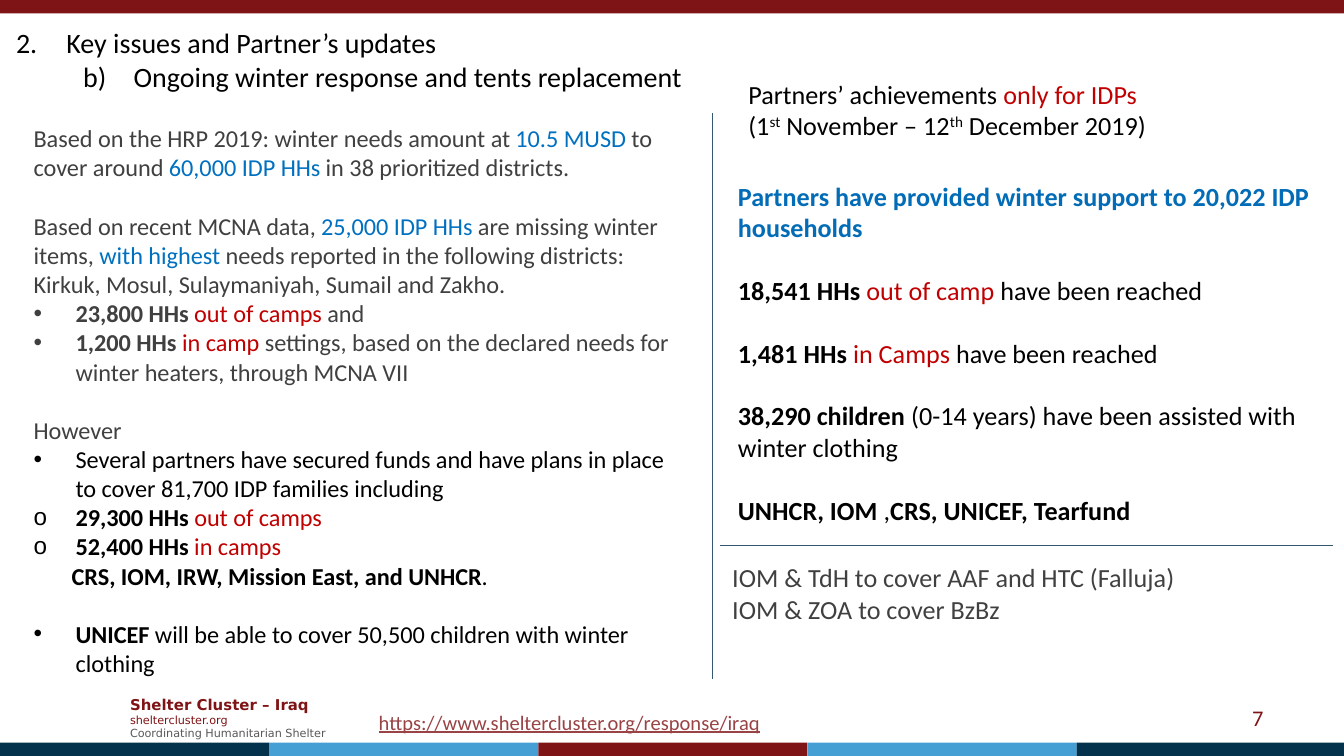
from lxml import etree
from pptx import Presentation
from pptx.dml.color import RGBColor
from pptx.enum import shapes, text
from pptx.oxml import ns
from pptx.util import Pt

MAROON = RGBColor(0x7F, 0x14, 0x16)
NAVY = RGBColor(0x04, 0x31, 0x4C)
SKY = RGBColor(0x45, 0x9F, 0xD5)
ROSE = RGBColor(0x99, 0x43, 0x45)
SLATE = RGBColor(0x33, 0x58, 0x6F)
BLUE = RGBColor(0x00, 0x70, 0xC0)
HEAD_BLUE = RGBColor(0x02, 0x6C, 0xB6)
RED = RGBColor(0xC0, 0x00, 0x00)
BLACK = RGBColor(0x00, 0x00, 0x00)
GREY = RGBColor(0x40, 0x40, 0x40)
MID_GREY = RGBColor(0x59, 0x59, 0x59)


def run(txt, color=None, bold=False, sup=False, size=None, underline=None):
    """Describe a run of text and its format."""
    return dict(txt=txt, color=color, bold=bold, sup=sup, size=size, underline=underline)


def para(*runs, bullet=None, number=None, left=0, hang=0, before=0, level=0):
    """Describe a paragraph made of runs."""
    return dict(runs=runs, bullet=bullet, number=number, left=left, hang=hang,
                before=before, level=level)


def item(*runs, bullet="•", before=0):
    """Describe a bulleted paragraph."""
    return para(*runs, bullet=bullet, left=22.5, hang=22.5, before=before)


def set_bullet(p, d):
    """Set the indent and the bullet or number of a paragraph."""
    pPr = p._p.get_or_add_pPr()
    pPr.set("marL", str(Pt(d["left"])))
    pPr.set("indent", str(-Pt(d["hang"])))
    if d["number"]:
        kind, start = d["number"]
        etree.SubElement(pPr, ns.qn("a:buAutoNum"), type=kind, startAt=str(start))
    elif d["bullet"]:
        etree.SubElement(pPr, ns.qn("a:buChar"), char=d["bullet"])
    else:
        etree.SubElement(pPr, ns.qn("a:buNone"))


def write(sp, box, paras, size=14, color=BLACK, font="Calibri", align=text.PP_ALIGN.LEFT,
          anchor=text.MSO_ANCHOR.TOP, wrap=True):
    """Place a text shape in its box and fill it with paragraphs."""
    sp.left, sp.top, sp.width, sp.height = (Pt(v) for v in box)
    tf = sp.text_frame
    tf.word_wrap = wrap
    tf.auto_size = text.MSO_AUTO_SIZE.NONE
    tf.vertical_anchor = anchor
    for i, d in enumerate(paras):
        p = tf.paragraphs[0] if i == 0 else tf.add_paragraph()
        set_bullet(p, d)
        p.level = d["level"]
        p.alignment = align
        p.space_before = Pt(d["before"])
        for f in d["runs"]:
            r = p.add_run()
            r.text = f["txt"]
            r.font.name = font
            r.font.size = Pt(f["size"] or size)
            r.font.bold = f["bold"]
            r.font.underline = f["underline"]
            r.font.color.rgb = f["color"] or color
            if f["sup"]:
                r._r.get_or_add_rPr().set("baseline", "30000")


def add_text(s, box, paras, **fmt):
    """Add a text box."""
    write(s.shapes.add_textbox(0, 0, 0, 0), box, paras, **fmt)


def add_bar(s, box, color):
    """Add a plain filled bar."""
    sp = s.shapes.add_shape(shapes.MSO_SHAPE.RECTANGLE, *(Pt(v) for v in box))
    sp.shadow.inherit = False
    sp.fill.solid()
    sp.fill.fore_color.rgb = color
    sp.line.fill.background()


def add_rule(s, x1, y1, x2, y2):
    """Add a thin dividing line."""
    ln = s.shapes.add_connector(shapes.MSO_CONNECTOR.STRAIGHT, Pt(x1), Pt(y1), Pt(x2), Pt(y2))
    ln.line.color.rgb = SLATE
    ln.line.width = Pt(0.75)
    etree.SubElement(ln._element.spPr, ns.qn("a:effectLst"))


def add_footer(s, x, y, w, h):
    """Add the footer texts and the coloured strip below them."""
    strip = 7.2
    step = w / 5
    for i, color in enumerate((NAVY, SKY, MAROON, SKY, NAVY)):
        add_bar(s, (x + i * step, y + h - strip, step, strip), color)
    add_text(s, (x + 62.6, y, 124.6, 31.7), [
        para(run("Shelter Cluster – Iraq", bold=True, size=8)),
        para(run("sheltercluster.org")),
        para(run("Coordinating Humanitarian Shelter", MID_GREY)),
    ], size=6, color=MAROON, font="DejaVu Sans", anchor=text.MSO_ANCHOR.MIDDLE)
    add_text(s, (x + 195.8, y + 8, 222.5, 20.9),
             [para(run("https://www.sheltercluster.org/response/iraq", underline=True))],
             size=11, color=ROSE, wrap=False)
    add_text(s, (x + 516.2, y + 5, 167.8, 21.6), [para(run("7"))], size=12, color=MAROON,
             align=text.PP_ALIGN.RIGHT, anchor=text.MSO_ANCHOR.MIDDLE)


def add_heading(s, box):
    """Fill the title with the numbered agenda heading."""
    write(s.shapes.title, box, [
        para(run("Key issues and Partner’s updates"),
             number=("arabicPeriod", 2), left=27, hang=27),
        para(run("Ongoing winter response and tents replacement"),
             number=("alphaLcParenR", 2), left=63, hang=27, level=1),
    ], size=15)


def add_needs(s, box):
    """Fill the left body with the winter needs and plans."""
    gap = 15.6
    write(s.placeholders[1], box, [
        para(run("Based on the HRP 2019: winter needs amount at "), run("10.5 MUSD ", BLUE),
             run("to cover around "), run("60,000 IDP HHs ", BLUE),
             run("in 38 prioritized districts.")),
        para(run("Based on recent MCNA data, "), run("25,000 IDP HHs ", BLUE),
             run("are missing winter items, "), run("with highest ", BLUE),
             run("needs reported in the following districts: "
                 "Kirkuk, Mosul, Sulaymaniyah, Sumail and Zakho."), before=gap),
        item(run("23,800 HHs ", bold=True), run("out of camps", RED), run(" and")),
        item(run("1,200 HHs ", bold=True), run("in camp ", RED),
             run("settings, based on the declared needs for winter heaters, through MCNA VII")),
        para(run("However"), before=gap),
        item(run("Several partners have secured funds and have plans in place "
                 "to cover 81,700 IDP families including", BLACK)),
        item(run("29,300 HHs", BLACK, True), run(" out of camps", RED), bullet="o"),
        item(run("52,400 HHs ", BLACK, True), run("in camps", RED), bullet="o"),
        para(run("CRS, IOM, IRW, Mission East, and UNHCR", BLACK, True), run(".", BLACK),
             left=20.4),
        item(run("UNICEF", BLACK, True),
             run(" will be able to cover 50,500 children with winter clothing", BLACK),
             before=gap),
    ], size=13, color=GREY)


def add_achievements(s, x, y, w, h):
    """Add the right column: period, results and coverage."""
    gap = 16.8
    add_text(s, (x + 12.2, y, 317.5, 41), [
        para(run("Partners’ achievements "), run("only for IDPs", RED)),
        para(run("(1"), run("st", sup=True), run(" November – 12"), run("th", sup=True),
             run(" December 2019)")),
    ])
    write(s.placeholders[2], (x + 6.5, y + 54.7, 321.8, 193.7), [
        para(run("Partners have provided winter support to 20,022 IDP households",
                 HEAD_BLUE, True)),
        para(run("18,541 HHs ", bold=True), run("out of camp", RED),
             run(" have been reached"), before=gap),
        para(run("1,481 HHs ", bold=True), run("in Camps ", RED),
             run("have been reached"), before=gap),
        para(run("38,290 children ", bold=True),
             run("(0-14 years) have been assisted with winter clothing"), before=gap),
        para(run("UNHCR, IOM", bold=True), run(" ,"),
             run("CRS, UNICEF, Tearfund", bold=True), before=gap),
    ])
    add_rule(s, x, y + 22.3, x, y + h)
    add_rule(s, x + 4.3, y + 254.1, x + w, y + 254.1)
    add_text(s, (x + 3.6, y + 259.2, 324, 41), [
        para(run("IOM & TdH to cover AAF and HTC (Falluja)")),
        para(run("IOM & ZOA to cover BzBz")),
    ], color=GREY)


def main():
    """Build and save the slide."""
    prs = Presentation()
    prs.slide_width, prs.slide_height = Pt(720), Pt(405)
    s = prs.slides.add_slide(prs.slide_layouts[3])
    add_bar(s, (0, 0, 720, 7.2), MAROON)
    add_footer(s, 0, 368.6, 721, 36.4)
    add_heading(s, (1.4, 10.1, 716.4, 43.9))
    add_needs(s, (10.8, 62.6, 360, 306.7))
    add_achievements(s, 381.6, 38.2, 332.6, 325.4)
    prs.save("out.pptx")


if __name__ == "__main__":
    main()
